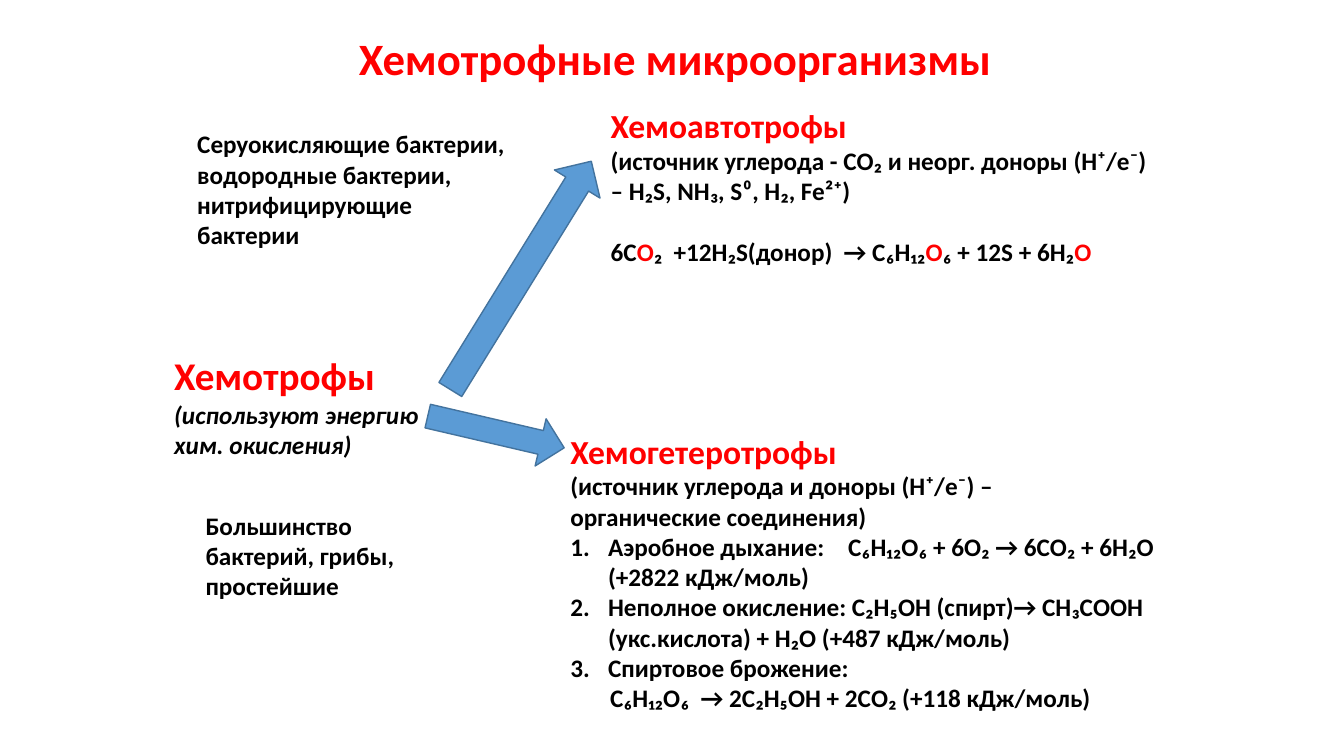
from dataclasses import dataclass

from lxml.etree import SubElement
from pptx import Presentation
from pptx.dml.color import RGBColor
from pptx.enum.shapes import MSO_SHAPE
from pptx.enum.text import MSO_ANCHOR, MSO_AUTO_SIZE, PP_ALIGN
from pptx.oxml.ns import qn
from pptx.shapes.autoshape import Shape
from pptx.slide import Slide
from pptx.util import Cm, Pt

RED = "FF0000"
BLACK = "000000"
FONT = "Calibri"


@dataclass(frozen=True)
class Run:
    text: str
    color: str = BLACK
    size: float = 18
    italic: bool = False


@dataclass(frozen=True)
class Para:
    runs: tuple[Run, ...]
    numbered: bool = False
    margin: float = 0
    before: float = 0
    tab: float = 0


@dataclass(frozen=True)
class Box:
    left: float
    top: float
    width: float
    height: float


@dataclass(frozen=True)
class Block:
    box: Box
    paras: tuple[Para, ...]


@dataclass(frozen=True)
class Arrow:
    box: Box
    kind: MSO_SHAPE
    angle: float


def line(text: str, italic: bool = False) -> Para:
    return Para((Run(text, italic=italic),))


def heading(text: str, size: float) -> Para:
    return Para((Run(text, RED, size),))


def item(text: str, tab: float = 0) -> Para:
    return Para((Run(text),), numbered=True, margin=0.95, tab=tab)


TITLE = Block(Box(5.59, 0.13, 22.86, 2.79), (heading("Хемотрофные микроорганизмы", 32),))

HETEROTROPHS = Block(Box(14.12, 10.72, 15.39, 7.44), (
    heading("Хемогетеротрофы", 24),
    line("(источник углерода и доноры (Н⁺/е⁻) –"),
    line("органические соединения)"),
    item("Аэробное дыхание:\tС₆Н₁₂О₆ + 6О₂ → 6СО₂ + 6Н₂О (+2822 кДж/моль)", tab=7),
    item("Неполное окисление: С₂Н₅ОН (спирт)→ СН₃СООН (укс.кислота) + Н₂О (+487 кДж/моль)"),
    item("Спиртовое брожение:"),
    Para((Run("С₆Н₁₂О₆  → 2С₂Н₅ОН + 2СО₂ (+118 кДж/моль)"),), margin=1),
))

TEXT_BLOCKS = (
    Block(Box(4.14, 8.74, 8.61, 3), (
        heading("Хемотрофы", 28),
        line("(используют энергию", italic=True),
        line("хим. окисления)", italic=True),
    )),
    Block(Box(15.14, 2.51, 14.4, 5.13), (
        heading("Хемоавтотрофы", 24),
        line("(источник углерода - СО₂ и неорг. доноры (Н⁺/е⁻) – H₂S, NH₃, S⁰, H₂, Fe²⁺)"),
        Para((
            Run("6C"), Run("O", RED), Run("₂  +12H₂S(донор)  → C₆H₁₂"),
            Run("O", RED), Run("₆ + 12S + 6Н₂"), Run("О", RED),
        ), before=22),
    )),
    Block(Box(4.72, 3.12, 8.38, 3.33), (
        line("Серуокисляющие бактерии, водородные бактерии, нитрифицирующие бактерии"),
    )),
    Block(Box(4.93, 12.73, 6.4, 2.57), (line("Большинство бактерий, грибы, простейшие"),)),
)

ARROWS = (
    Arrow(Box(12.45, 3.56, 1.35, 6.76), MSO_SHAPE.UP_ARROW, 31.7),
    Arrow(Box(11.89, 9.12, 1.22, 3.53), MSO_SHAPE.DOWN_ARROW, 283.1),
)


def rgb(color: str) -> RGBColor:
    return RGBColor.from_string(color)


def place(sp: Shape, box: Box) -> None:
    sp.left, sp.top = Cm(box.left), Cm(box.top)
    sp.width, sp.height = Cm(box.width), Cm(box.height)


def write(sp: Shape, paras: tuple[Para, ...]) -> None:
    tf = sp.text_frame
    tf.word_wrap = True
    tf.auto_size = MSO_AUTO_SIZE.NONE
    for i, para in enumerate(paras):
        p = tf.add_paragraph() if i else tf.paragraphs[0]
        p.space_before = Pt(para.before)
        pPr = p._p.get_or_add_pPr()
        pPr.set("marL", str(Cm(para.margin)))
        pPr.set("indent", str(-Cm(para.margin) if para.numbered else 0))
        if para.numbered:
            SubElement(pPr, qn("a:buFont"), typeface="+mj-lt")
            SubElement(pPr, qn("a:buAutoNum"), type="arabicPeriod")
        else:
            SubElement(pPr, qn("a:buNone"))
        if para.tab:
            tabs = SubElement(pPr, qn("a:tabLst"))
            SubElement(tabs, qn("a:tab"), pos=str(Cm(para.tab)), algn="l")
        for run in para.runs:
            r = p.add_run()
            r.text = run.text
            r.font.name = FONT
            r.font.size = Pt(run.size)
            r.font.bold = True
            r.font.italic = run.italic
            r.font.color.rgb = rgb(run.color)


def add_text(s: Slide, block: Block) -> None:
    b = block.box
    sp = s.shapes.add_textbox(Cm(b.left), Cm(b.top), Cm(b.width), Cm(b.height))
    write(sp, block.paras)


def add_arrow(s: Slide, arrow: Arrow) -> None:
    b = arrow.box
    sp = s.shapes.add_shape(arrow.kind, Cm(b.left), Cm(b.top), Cm(b.width), Cm(b.height))
    sp.rotation = arrow.angle
    sp.shadow.inherit = False
    sp.fill.solid()
    sp.fill.fore_color.rgb = rgb("5B9BD5")
    sp.line.color.rgb = rgb("43739E")
    sp.line.width = Pt(1)


def main() -> None:
    prs = Presentation()
    prs.slide_width, prs.slide_height = Cm(33.87), Cm(19.05)
    s = prs.slides.add_slide(prs.slide_layouts[1])

    for sp, block in zip(s.placeholders, (TITLE, HETEROTROPHS)):
        place(sp, block.box)
        write(sp, block.paras)
    title = s.shapes.title.text_frame
    title.vertical_anchor = MSO_ANCHOR.MIDDLE
    title.paragraphs[0].alignment = PP_ALIGN.CENTER
    title.paragraphs[0].line_spacing = 0.9

    for block in TEXT_BLOCKS:
        add_text(s, block)
    for arrow in ARROWS:
        add_arrow(s, arrow)
    prs.save("out.pptx")


if __name__ == "__main__":
    main()
